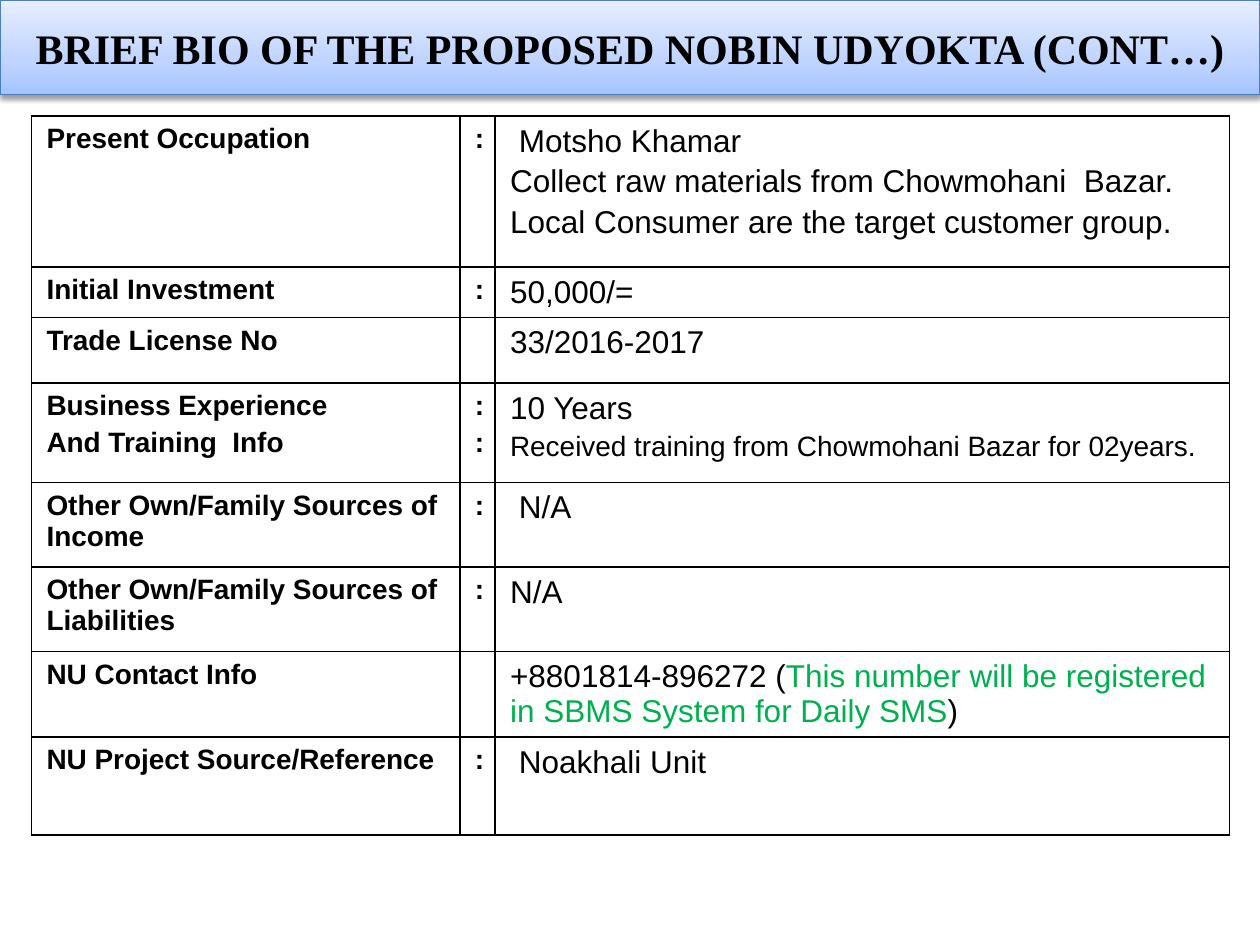
"""Build the entrepreneur bio slide: a title band above a bordered table of facts."""
from lxml.etree import SubElement
from pptx import Presentation
from pptx.dml.color import RGBColor
from pptx.enum.text import MSO_ANCHOR, MSO_AUTO_SIZE, PP_ALIGN
from pptx.oxml import parse_xml
from pptx.oxml.ns import nsdecls, qn
from pptx.util import Emu, Inches, Pt

TITLE = "BRIEF BIO OF THE PROPOSED NOBIN UDYOKTA (CONT…)"
BLACK, GREEN, BAND_LINE = "000000", "00B050", "4B7EBC"
BAND_STOPS = [(0, "A4C4FF"), (35, "BFD4FF"), (100, "E6EEFF")]
LABEL = {"size": Pt(16), "bold": True}
VALUE = {"size": Pt(18), "bold": False}
SMALL = {"size": Pt(16), "bold": False}
FLUSH, INSET = 0, 0.07

# Row height, labels, colons, then values as (indent, format, [(text, colour), ...])
FACTS = [
    (1.2, ["Present Occupation"], [":"], [
        (INSET, VALUE, [("Motsho Khamar", BLACK)]),
        (FLUSH, VALUE, [("Collect raw materials from Chowmohani  Bazar.", BLACK)]),
        (FLUSH, VALUE, [("Local Consumer are the target customer group.", BLACK)])]),
    (0.4, ["Initial Investment"], [":"], [(FLUSH, VALUE, [("50,000/=", BLACK)])]),
    (0.52, ["Trade License No"], [], [(FLUSH, VALUE, [("33/2016-2017", BLACK)])]),
    (0.79, ["Business Experience", "And Training  Info"], [":", ":"], [
        (FLUSH, VALUE, [("10 Years", BLACK)]),
        (FLUSH, SMALL, [("Received training from Chowmohani Bazar for 02years.", BLACK)])]),
    (0.67, ["Other Own/Family Sources of Income"], [":"], [(INSET, VALUE, [("N/A", BLACK)])]),
    (0.67, ["Other Own/Family Sources of Liabilities"], [":"], [(FLUSH, VALUE, [("N/A", BLACK)])]),
    (0.67, ["NU Contact Info"], [], [
        (FLUSH, VALUE, [
            ("+8801814-896272 (", BLACK),
            ("This number will be registered in SBMS System for Daily SMS", GREEN),
            (")", BLACK)])]),
    (0.78, ["NU Project Source/Reference"], [":"], [
        (INSET, VALUE, [("Noakhali Unit", BLACK)])]),
]
COLUMNS = [3.4, 0.27, 5.83]
CELL_MARGINS = {"margin_left": Inches(0.12), "margin_right": Inches(0.12),
                "margin_top": Inches(0.06), "margin_bottom": Inches(0.06)}


def color(hex_code):
    return RGBColor.from_string(hex_code)


def apply(target, values):
    for name, value in values.items():
        setattr(target, name, value)


def add_run(paragraph, text, hex_code, font_name, style):
    run = paragraph.add_run()
    run.text = text
    apply(run.font, {"name": font_name, **style})
    run.font.color.rgb = color(hex_code)


def plain(lines):
    return [(FLUSH, LABEL, [(line, BLACK)]) for line in lines]


def fill_cell(cell, lines):
    apply(cell, CELL_MARGINS)
    cell.fill.background()
    properties = cell._tc.get_or_add_tcPr()
    for position, side in enumerate(("lnL", "lnR", "lnT", "lnB")):
        border = parse_xml(
            f'<a:{side} {nsdecls("a")} w="{Pt(1)}"><a:solidFill>'
            f'<a:srgbClr val="{BLACK}"/></a:solidFill></a:{side}>')
        properties.insert(position, border)
    frame = cell.text_frame
    for number, (indent, style, runs) in enumerate(lines):
        paragraph = frame.add_paragraph() if number else frame.paragraphs[0]
        if number:
            paragraph.space_before = Pt(3)
        if indent:
            paragraph._p.get_or_add_pPr().set("marL", str(Inches(indent)))
        for text, hex_code in runs:
            add_run(paragraph, text, hex_code, "Arial", style)


def format_band(title, slide_width):
    apply(title, {"left": Emu(0), "top": Emu(0), "width": slide_width, "height": Inches(0.75)})
    stops = "".join(f'<a:gs pos="{share * 1000}"><a:srgbClr val="{hex_code}"/></a:gs>'
                    for share, hex_code in BAND_STOPS)
    title._element.spPr.append(parse_xml(
        f'<a:gradFill {nsdecls("a")} rotWithShape="1"><a:gsLst>{stops}</a:gsLst>'
        f'<a:lin ang="{270 * 60000}" scaled="0"/></a:gradFill>'))
    title.line.color.rgb = color(BAND_LINE)
    title.line.width = Pt(0.75)
    effects = SubElement(title._element.spPr, qn("a:effectLst"))
    effects.append(parse_xml(
        f'<a:outerShdw {nsdecls("a")} blurRad="{Pt(3.1)}" dist="{Pt(1.6)}" dir="{90 * 60000}" '
        f'rotWithShape="0"><a:srgbClr val="{BLACK}"><a:alpha val="38000"/></a:srgbClr>'
        '</a:outerShdw>'))
    frame = title.text_frame
    apply(frame, {"word_wrap": True, "auto_size": MSO_AUTO_SIZE.NONE,
                  "vertical_anchor": MSO_ANCHOR.MIDDLE})
    heading = frame.paragraphs[0]
    heading.alignment = PP_ALIGN.CENTER
    add_run(heading, TITLE, BLACK, "Times New Roman", {"size": Pt(24), "bold": True})


def add_facts(slide):
    heights = [fact[0] for fact in FACTS]
    facts = slide.shapes.add_table(
        len(FACTS), len(COLUMNS), Inches(0.25), Inches(0.92),
        Inches(sum(COLUMNS)), Inches(sum(heights))).table
    apply(facts, {"first_row": False, "horz_banding": False})
    for column, width in zip(facts.columns, COLUMNS):
        column.width = Inches(width)
    for row, (height, labels, colons, values) in zip(facts.rows, FACTS):
        row.height = Inches(height)
        for cell, lines in zip(row.cells, (plain(labels), plain(colons), values)):
            fill_cell(cell, lines)


def main():
    deck = Presentation()
    apply(deck, {"slide_width": Inches(10), "slide_height": Inches(7.5)})
    slide = deck.slides.add_slide(deck.slide_layouts[5])
    format_band(slide.shapes.title, deck.slide_width)
    add_facts(slide)
    deck.save("out.pptx")


if __name__ == "__main__":
    main()
